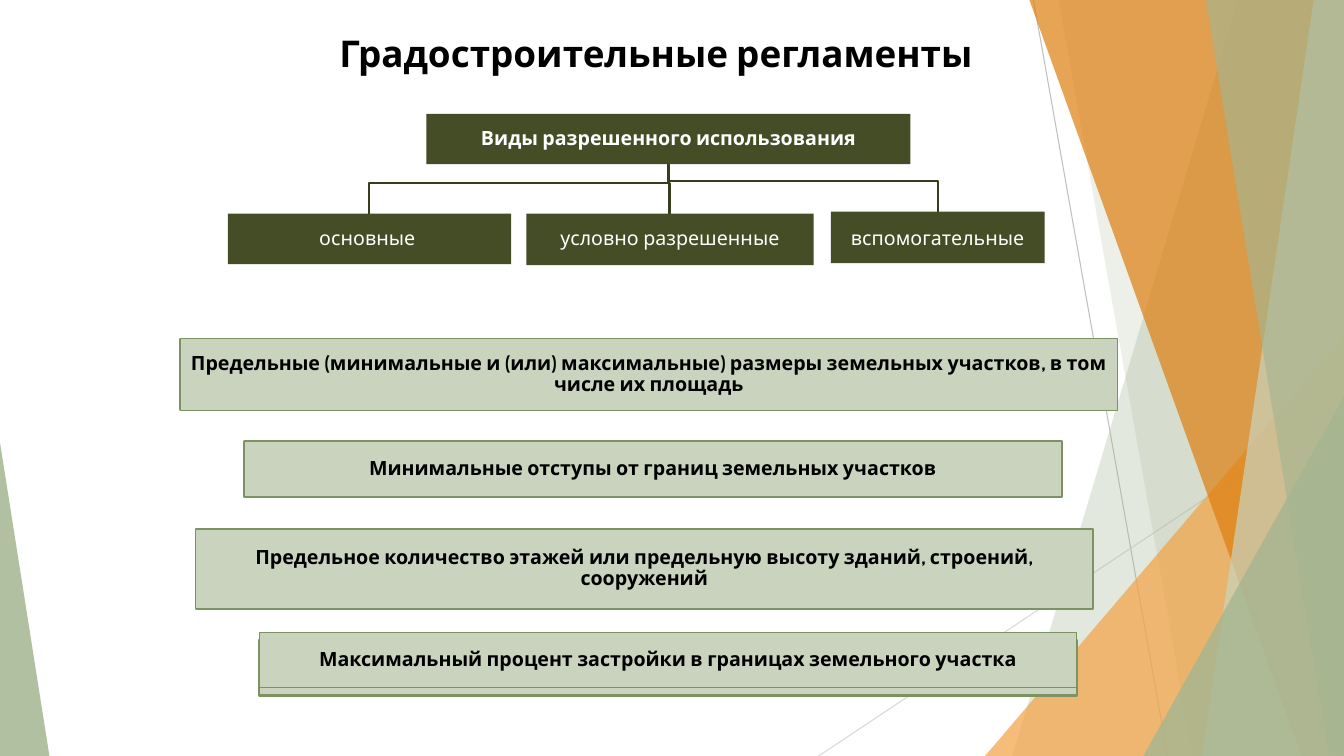
from dataclasses import dataclass

import pptx
import pptx.dml.color
import pptx.enum.shapes
import pptx.enum.text
import pptx.oxml.ns
import pptx.oxml.xmlchemy
import pptx.util

PX = 9144  # EMU per px, 100 px to the inch
WIDTH, HEIGHT = 1333, 750
FONT = "Cabin"
SAGE, PALE_SAGE, SAGE_EDGE = "A5B592", "C9D3BE", "7D9263"
OLIVE, OLIVE_EDGE = "444D26", "363E1E"
RECTANGLE = pptx.enum.shapes.MSO_SHAPE.RECTANGLE


@dataclass(frozen=True)
class Shard:
    """Full-height band from a slanted left edge to the right side of the page."""
    top_left: int
    bottom_left: int
    colour: str
    opacity: int


@dataclass(frozen=True)
class Wedge:
    """Right triangle standing on the bottom of the page; apex 0 is left, 1 is right."""
    left: int
    top: int
    width: int
    apex: int
    colour: str
    opacity: int


@dataclass(frozen=True)
class Box:
    left: int
    top: int
    width: int
    height: int
    label: str
    bold: bool = False
    spacing: float = 0.9
    backing_offset: int = 0


DECOR = (
    Shard(1228, 1004, SAGE, 30),
    Shard(1050, 1183, SAGE, 20),
    Wedge(977, 333, 356, 1, "F3A447", 72),
    Shard(1021, 1291, "DD7E0E", 70),
    Shard(1303, 1192, PALE_SAGE, 70),
    Shard(1196, 1318, SAGE, 65),
    Wedge(1134, 393, 199, 1, SAGE, 80),
    Wedge(0, 439, 49, 0, SAGE, 85),
)
ROOT = Box(423, 113, 480, 50, "Виды разрешенного использования", bold=True)
KINDS = (
    Box(824, 210, 212, 51, "вспомогательные", spacing=1.0),
    Box(522, 212, 285, 51, "условно разрешенные"),
    Box(226, 212, 281, 50, "основные "),
)
LIMITS = (
    Box(179, 336, 929, 71, "Предельные (минимальные и (или) максимальные) размеры "
        "земельных участков, в том числе их площадь", bold=True),
    Box(242, 438, 811, 55, "Минимальные отступы от границ земельных участков", bold=True),
    Box(194, 525, 890, 79, "Предельное количество этажей или предельную высоту зданий, "
        "строений, сооружений", bold=True),
    Box(257, 627, 811, 55, "Максимальный процент застройки в границах земельного участка",
        bold=True, backing_offset=8),
)


def px(length: int) -> pptx.util.Emu:
    return pptx.util.Emu(length * PX)


def rgb(colour: str) -> pptx.dml.color.RGBColor:
    return pptx.dml.color.RGBColor.from_string(colour)


def set_fill(shape, colour: str, opacity: int = 100) -> None:
    shape.shadow.inherit = False
    shape.fill.solid()
    shape.fill.fore_color.rgb = rgb(colour)
    shape.line.fill.background()
    if opacity < 100:
        tint = shape._element.spPr.find(".//" + pptx.oxml.ns.qn("a:srgbClr"))
        alpha = pptx.oxml.xmlchemy.OxmlElement("a:alpha")
        alpha.set("val", str(opacity * 1000))
        tint.append(alpha)


def set_line(shape, colour: str, points: float) -> None:
    shape.line.color.rgb = rgb(colour)
    shape.line.width = pptx.util.Pt(points)


def set_text(frame, text: str, size: float, colour: str, bold: bool, spacing: float) -> None:
    frame.text = text
    frame.word_wrap = True
    para = frame.paragraphs[0]
    para.alignment = pptx.enum.text.PP_ALIGN.CENTER
    para.line_spacing = spacing
    for span in para.runs:
        span.font.name = FONT
        span.font.size = pptx.util.Pt(size)
        span.font.bold = bold
        span.font.color.rgb = rgb(colour)


def add_outline(page, points: list[tuple[int, int]], close: bool):
    builder = page.shapes.build_freeform(*points[0], scale=PX)
    builder.add_line_segments(points[1:], close=close)
    return builder.convert_to_shape()


def add_thin_line(page, start: tuple[int, int], end: tuple[int, int], colour: str) -> None:
    line = page.shapes.add_connector(
        pptx.enum.shapes.MSO_CONNECTOR.STRAIGHT, *map(px, start + end))
    set_line(line, colour, 0.75)
    line._element.spPr.append(pptx.oxml.xmlchemy.OxmlElement("a:effectLst"))


def add_decor(page, piece: Shard | Wedge) -> None:
    if isinstance(piece, Shard):
        shape = add_outline(page, [(piece.top_left, 0), (WIDTH, 0), (WIDTH, HEIGHT),
                                   (piece.bottom_left, HEIGHT)], close=True)
    else:
        shape = page.shapes.add_shape(
            pptx.enum.shapes.MSO_SHAPE.ISOSCELES_TRIANGLE, px(piece.left), px(piece.top),
            px(piece.width), px(HEIGHT - piece.top))
        shape.adjustments[0] = piece.apex
    set_fill(shape, piece.colour, piece.opacity)


def add_branch(page, parent: Box, child: Box) -> None:
    """Elbow line from the bottom of the parent to the top of the child."""
    start_x, start_y = parent.left + parent.width // 2, parent.top + parent.height
    end_x = child.left + child.width // 2
    bend_y = child.top - 30
    branch = add_outline(page, [(start_x, start_y), (start_x, bend_y), (end_x, bend_y),
                                (end_x, child.top)], close=False)
    branch.shadow.inherit = False
    branch.fill.background()
    set_line(branch, OLIVE_EDGE, 1.5)


def add_rectangle(page, box: Box, colour: str, offset: int = 0):
    shape = page.shapes.add_shape(
        RECTANGLE, px(box.left), px(box.top + offset), px(box.width), px(box.height))
    set_fill(shape, colour)
    return shape


def add_label(shape, box: Box, colour: str) -> None:
    frame = shape.text_frame
    frame.margin_left = frame.margin_right = frame.margin_top = frame.margin_bottom = px(1)
    frame.vertical_anchor = pptx.enum.text.MSO_ANCHOR.MIDDLE
    set_text(frame, box.label, 14, colour, box.bold, box.spacing)


def add_limit(page, box: Box) -> None:
    """Labelled bar lying on a backing bar with a thicker border."""
    backing = add_rectangle(page, box, PALE_SAGE, box.backing_offset)
    set_line(backing, SAGE_EDGE, 1.5)
    bar = add_rectangle(page, box, PALE_SAGE)
    set_line(bar, SAGE_EDGE, 0.75)
    add_label(bar, box, "000000")


def fill_title(title) -> None:
    title.left, title.top, title.width, title.height = map(px, (242, 25, 817, 69))
    frame = title.text_frame
    set_text(frame, "Градостроительные регламенты", 26.3, "000000", True, 1.0)
    frame.auto_size = pptx.enum.text.MSO_AUTO_SIZE.NONE
    frame.vertical_anchor = pptx.enum.text.MSO_ANCHOR.TOP


def main() -> None:
    deck = pptx.Presentation()
    deck.slide_width, deck.slide_height = px(WIDTH), px(HEIGHT)
    page = deck.slides.add_slide(deck.slide_layouts[5])
    fill_title(page.shapes.title)
    add_thin_line(page, (1025, 0), (1158, HEIGHT), "BFBFBF")
    add_thin_line(page, (WIDTH, 403), (812, HEIGHT), "D9D9D9")
    for piece in DECOR:
        add_decor(page, piece)
    for kind in KINDS:
        add_branch(page, ROOT, kind)
    for box in (ROOT, *KINDS):
        add_label(add_rectangle(page, box, OLIVE), box, "FFFFFF")
    for limit in LIMITS:
        add_limit(page, limit)
    deck.save("out.pptx")


if __name__ == "__main__":
    main()
